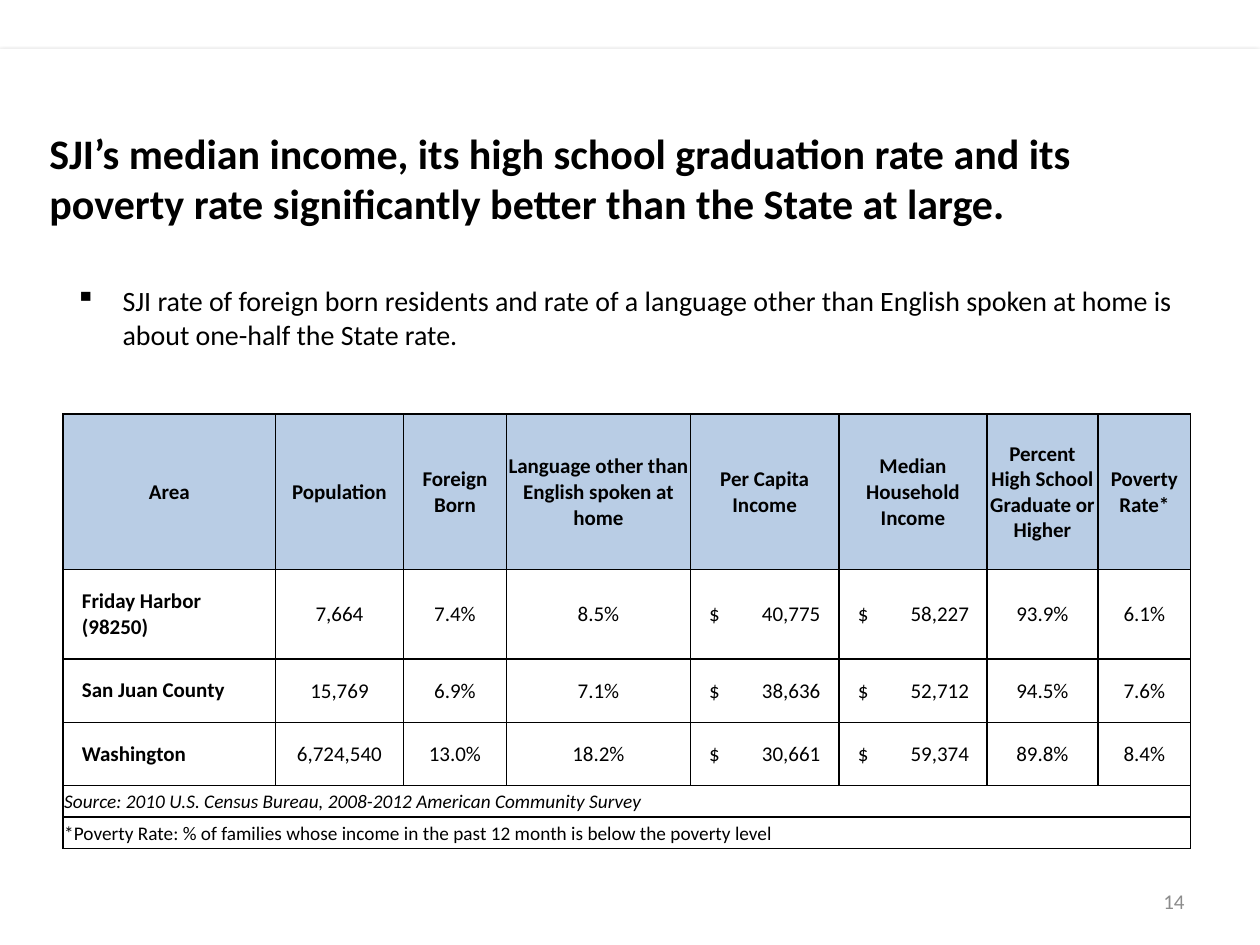
"""Build a slide comparing island income and education with the state."""
from dataclasses import dataclass

from lxml import etree
from pptx import Presentation
from pptx.dml.color import RGBColor
from pptx.enum.shapes import MSO_SHAPE
from pptx.enum.text import MSO_ANCHOR, MSO_AUTO_SIZE, PP_ALIGN
from pptx.oxml import parse_xml
from pptx.util import Pt

LEFT, MID, RIGHT = PP_ALIGN.LEFT, PP_ALIGN.CENTER, PP_ALIGN.RIGHT
TOP, CENTER = MSO_ANCHOR.TOP, MSO_ANCHOR.MIDDLE
RECT, FIXED = MSO_SHAPE.RECTANGLE, MSO_AUTO_SIZE.NONE
URI = "http://schemas.openxmlformats.org/drawingml/2006/main"


@dataclass(frozen=True)
class Theme:
    """Hold the colours, font and type sizes of the slide."""
    font: str = "Calibri"
    ink: str = "000000"
    paper: str = "FFFFFF"
    head: str = "B9CDE5"
    pale: str = "8C8C8C"
    title: int = 24
    body: int = 16
    cell: int = 12
    note: int = 11


LOOK = Theme()
COLS = [121.5, 73, 59, 105, 85, 84.5, 63.5, 53]
ROWS = [89, 51, 36, 36, 18, 18]
HEADS = ["Area", "Population", "Foreign Born",
         "Language other than English spoken at home",
         "Per Capita Income", "Median Household Income",
         "Percent High School Graduate or Higher", "Poverty Rate*"]
DATA = [
    ["Friday Harbor (98250)", "7,664", "7.4%", "8.5%",
     "$\t40,775", "$\t58,227", "93.9%", "6.1%"],
    ["San Juan County", "15,769", "6.9%", "7.1%",
     "$\t38,636", "$\t52,712", "94.5%", "7.6%"],
    ["Washington", "6,724,540", "13.0%", "18.2%",
     "$\t30,661", "$\t59,374", "89.8%", "8.4%"],
]
NOTES = [
    "Source: 2010 U.S. Census Bureau, 2008-2012 American Community Survey",
    "*Poverty Rate: % of families whose income in the past 12 month "
    "is below the poverty level",
]


def put(frame, text, size=LOOK.cell, color=LOOK.ink, bold=False, slant=False,
        align=LEFT, bullet=None, tab=None):
    """Write one formatted paragraph into a text frame."""
    para = frame.paragraphs[0]
    para.alignment = align
    props = para._p.get_or_add_pPr()
    if bullet:
        props.set("marL", str(Pt(27)))
        props.set("indent", str(Pt(-27)))
        etree.SubElement(props, f"{{{URI}}}buChar", char=bullet)
    if tab:
        stops = etree.SubElement(props, f"{{{URI}}}tabLst")
        etree.SubElement(stops, f"{{{URI}}}tab", pos=str(Pt(tab)), algn="r")
    run = para.add_run()
    run.text = text
    font = run.font
    font.name, font.size = LOOK.font, Pt(size)
    font.bold, font.italic = bold, slant
    font.color.rgb = RGBColor.from_string(color)


def place(shape, box):
    """Set the position and size of a shape."""
    shape.left, shape.top, shape.width, shape.height = map(Pt, box)


def setup(frame, anchor):
    """Give a text frame wrapping, fixed size and an anchor."""
    frame.word_wrap, frame.auto_size = True, FIXED
    frame.vertical_anchor = anchor


def add_title(slide, text, box):
    """Place and fill the title placeholder."""
    title = slide.shapes.title
    place(title, box)
    setup(title.text_frame, CENTER)
    put(title.text_frame, text, size=LOOK.title, bold=True)


def add_text(slide, text, box, anchor=TOP, **form):
    """Add a text box."""
    frame = slide.shapes.add_textbox(*map(Pt, box)).text_frame
    setup(frame, anchor)
    put(frame, text, **form)


def add_panel(slide, box):
    """Add the white page panel with its soft shadow behind the title."""
    panel = slide.shapes.add_shape(RECT, *map(Pt, box))
    panel.fill.solid()
    panel.fill.fore_color.rgb = RGBColor.from_string(LOOK.paper)
    panel.line.fill.background()
    panel.element.spPr.append(parse_xml(
        f'<a:effectLst xmlns:a="{URI}"><a:outerShdw blurRad="{Pt(3.1)}" '
        f'dist="{Pt(1.8)}" dir="5400000" rotWithShape="0">'
        f'<a:srgbClr val="{LOOK.ink}"><a:alpha val="35000"/></a:srgbClr>'
        '</a:outerShdw></a:effectLst>'))
    slide.shapes.title.element.addprevious(panel.element)


def style(cell, fill, pad=None):
    """Set the fill, margins and borders of a table cell."""
    cell.fill.solid()
    cell.fill.fore_color.rgb = RGBColor.from_string(fill)
    cell.vertical_anchor = CENTER
    sides = pad or (0.7, 0.7, 0.7, 0)
    (cell.margin_left, cell.margin_top,
     cell.margin_right, cell.margin_bottom) = map(Pt, sides)
    props = cell._tc.get_or_add_tcPr()
    for spot, tag in enumerate(("lnL", "lnR", "lnT", "lnB")):
        props.insert(spot, parse_xml(
            f'<a:{tag} xmlns:a="{URI}" w="{Pt(1)}"><a:solidFill>'
            f'<a:srgbClr val="{LOOK.ink}"/></a:solidFill></a:{tag}>'))


def fill_row(table, row, values):
    """Write one row of area data."""
    for col, text in enumerate(values):
        cell = table.cell(row, col)
        if col == 0:
            style(cell, LOOK.paper, pad=(10.8,) * 4)
            put(cell.text_frame, text, bold=True)
        elif "\t" in text:
            style(cell, LOOK.paper, pad=(10.8, 0.7, 0.7, 0))
            put(cell.text_frame, text, tab=63.5)
        else:
            style(cell, LOOK.paper)
            put(cell.text_frame, text, align=MID)


def add_grid(slide, left, top):
    """Add the table of areas with its notes."""
    table = slide.shapes.add_table(
        len(ROWS), len(COLS), Pt(left), Pt(top),
        Pt(sum(COLS)), Pt(sum(ROWS))).table
    table.first_row = table.horz_banding = False
    for col, width in zip(table.columns, COLS):
        col.width = Pt(width)
    for row, height in zip(table.rows, ROWS):
        row.height = Pt(height)
    for col, text in enumerate(HEADS):
        cell = table.cell(0, col)
        style(cell, LOOK.head)
        put(cell.text_frame, text, bold=True, align=MID)
    for row, values in enumerate(DATA, 1):
        fill_row(table, row, values)
    for row, text in enumerate(NOTES, len(DATA) + 1):
        for col in range(len(COLS)):
            style(table.cell(row, col), LOOK.paper)
        cell = table.cell(row, 0)
        cell.merge(table.cell(row, len(COLS) - 1))
        put(cell.text_frame, text, size=LOOK.note,
            slant=text.startswith("Source"))


def main():
    """Build and save the slide."""
    deck = Presentation()
    deck.slide_width, deck.slide_height = Pt(720), Pt(540)
    slide = deck.slides.add_slide(deck.slide_layouts[5])
    add_panel(slide, (0, 28, 720, 512))
    add_title(slide, "SJI’s median income, its high school graduation rate and "
              "its poverty rate significantly better than the State at large.",
              (21, 61, 672, 81))
    add_grid(slide, 36, 236.5)
    add_text(slide, "SJI rate of foreign born residents and rate of a language "
             "other than English spoken at home is about one-half the State "
             "rate.", (36, 158.5, 642, 78), size=LOOK.body, bullet="▪")
    add_text(slide, "14", (516, 500.5, 168, 29), anchor=CENTER,
             color=LOOK.pale, align=RIGHT)
    deck.save("out.pptx")


if __name__ == "__main__":
    main()
